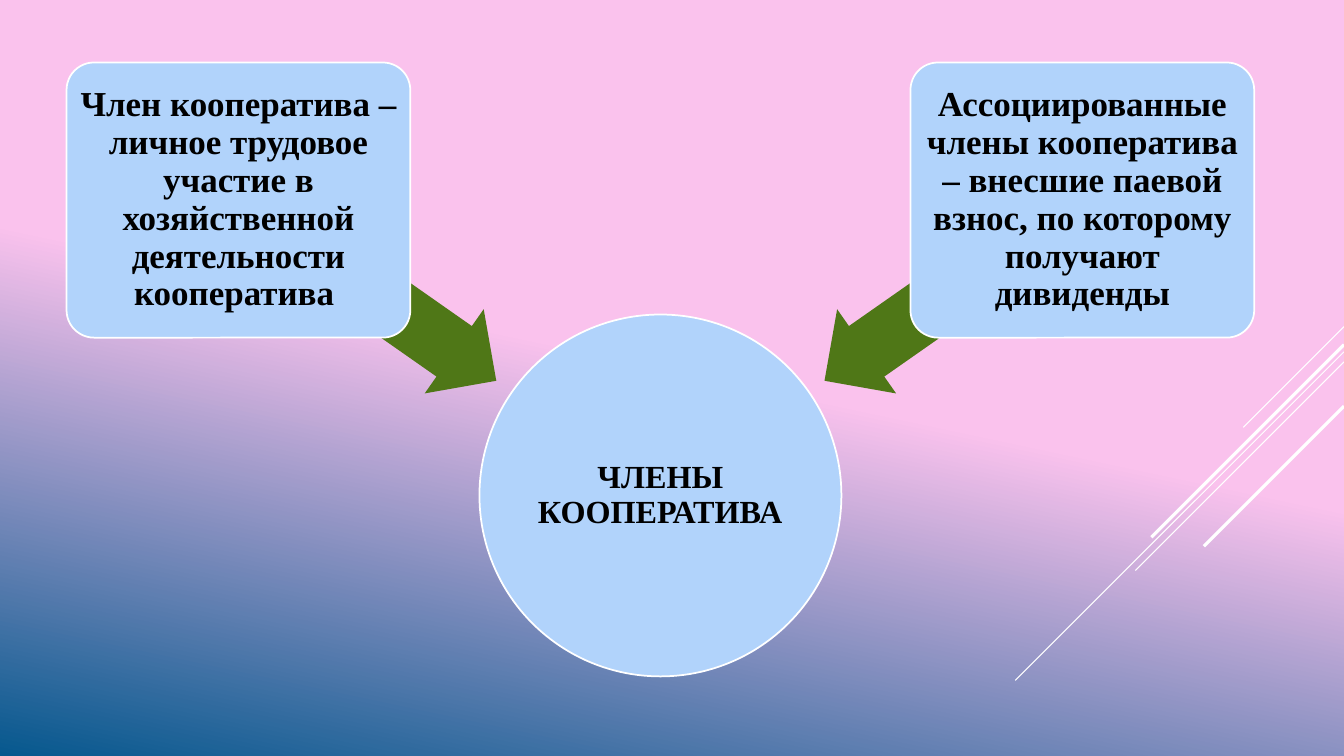
from lxml import etree
from pptx import Presentation
from pptx.dml.color import RGBColor
from pptx.enum.shapes import MSO_CONNECTOR, MSO_SHAPE
from pptx.enum.text import MSO_ANCHOR, PP_ALIGN
from pptx.oxml.ns import qn
from pptx.util import Inches, Pt

WIDTH, HEIGHT = 13.33, 7.5
AXIS = 6.55
FONT = "Times New Roman"
STRAIGHT = MSO_CONNECTOR.STRAIGHT
OVAL, ROUNDED, ARROW = MSO_SHAPE.OVAL, MSO_SHAPE.ROUNDED_RECTANGLE, MSO_SHAPE.LEFT_ARROW
COLORS = {"pink": "FAC2ED", "deep_blue": "06588E", "light_blue": "B1D3FB",
          "green": "4F7717", "white": "FFFFFF", "black": "000000"}
MEMBER_SIZE = (3.41, 2.73)
MEMBER_TOP, MEMBER_OFFSET = 0.62, 4.185
ARROW_SIZE = (3.13, 1.02)
ARROW_TOP, ARROW_OFFSET, ARROW_TILT = 2.37, 2.91, 35
CIRCLE_TOP, CIRCLE_SIZE = 3.12, 3.59
STREAKS = [(3.24, 1.0, 0.75), (3.49, 3.26, 0.75), (3.59, 2.07, 0.75),
           (3.42, 1.91, 2.25), (4.03, 1.39, 2.25)]
MEMBERS = [
    (-1, "Член кооператива – личное трудовое участие в хозяйственной деятельности кооператива "),
    (1, "Ассоциированные члены кооператива – внесшие паевой взнос, по которому получают дивиденды"),
]


def color(name):
    """Return the named palette colour."""
    return RGBColor.from_string(COLORS[name])


def paint_background(page):
    """Fill the page with the tilted pink to blue gradient."""
    fill = page.background.fill
    fill.gradient()
    fill.gradient_angle = 360 - 102
    for stop, (position, name) in zip(fill.gradient_stops, [(0.49, "pink"), (1, "deep_blue")]):
        stop.position = position
        stop.color.rgb = color(name)


def draw_streaks(page, right):
    """Draw the diagonal white lines that start at the right edge."""
    for top, reach, weight in STREAKS:
        streak = page.shapes.add_connector(
            STRAIGHT, Inches(right), Inches(top), Inches(right - reach), Inches(top + reach))
        streak.line.color.rgb = color("white")
        streak.line.width = Pt(weight)
        etree.SubElement(streak.line._get_or_add_ln().getparent(), qn("a:effectLst"))


def add_figure(page, kind, center, top, size, fill):
    """Add a flat filled shape centred horizontally on the given position."""
    width, height = size
    figure = page.shapes.add_shape(
        kind, Inches(center - width / 2), Inches(top), Inches(width), Inches(height))
    figure.shadow.inherit = False
    figure.fill.solid()
    figure.fill.fore_color.rgb = color(fill)
    figure.line.fill.background()
    return figure


def add_label(page, kind, center, top, size, text, points, inset):
    """Add a light blue outlined shape with bold centred text."""
    box = add_figure(page, kind, center, top, size, "light_blue")
    box.line.color.rgb = color("white")
    box.line.width = Pt(1.25)
    frame = box.text_frame
    frame.word_wrap = True
    frame.vertical_anchor = MSO_ANCHOR.MIDDLE
    frame.margin_left = frame.margin_right = Inches(inset)
    frame.margin_top = frame.margin_bottom = Inches(inset)
    para = frame.paragraphs[0]
    para.text = text
    para.alignment = PP_ALIGN.CENTER
    para.line_spacing = 0.9
    para.font.name = FONT
    para.font.size = Pt(points)
    para.font.bold = True
    para.font.color.rgb = color("black")
    return box


def draw_member(page, side, text):
    """Draw one member box and its arrow on the given side of the axis."""
    arrow = add_figure(page, ARROW, AXIS + side * ARROW_OFFSET, ARROW_TOP, ARROW_SIZE, "green")
    arrow.adjustments[0] = 0.6
    arrow.adjustments[1] = 0.5
    arrow.rotation = 360 - ARROW_TILT if side > 0 else 180 + ARROW_TILT
    box = add_label(page, ROUNDED, AXIS + side * MEMBER_OFFSET, MEMBER_TOP,
                    MEMBER_SIZE, text, 25, 0.05)
    box.adjustments[0] = 0.1


def main():
    """Build the slide and save it."""
    deck = Presentation()
    deck.slide_width, deck.slide_height = Inches(WIDTH), Inches(HEIGHT)
    page = deck.slides.add_slide(deck.slide_layouts[6])
    paint_background(page)
    draw_streaks(page, WIDTH)
    add_label(page, OVAL, AXIS, CIRCLE_TOP, (CIRCLE_SIZE, CIRCLE_SIZE),
              "ЧЛЕНЫ КООПЕРАТИВА ", 23, 0.02)
    for side, text in MEMBERS:
        draw_member(page, side, text)
    deck.save("out.pptx")


if __name__ == "__main__":
    main()
